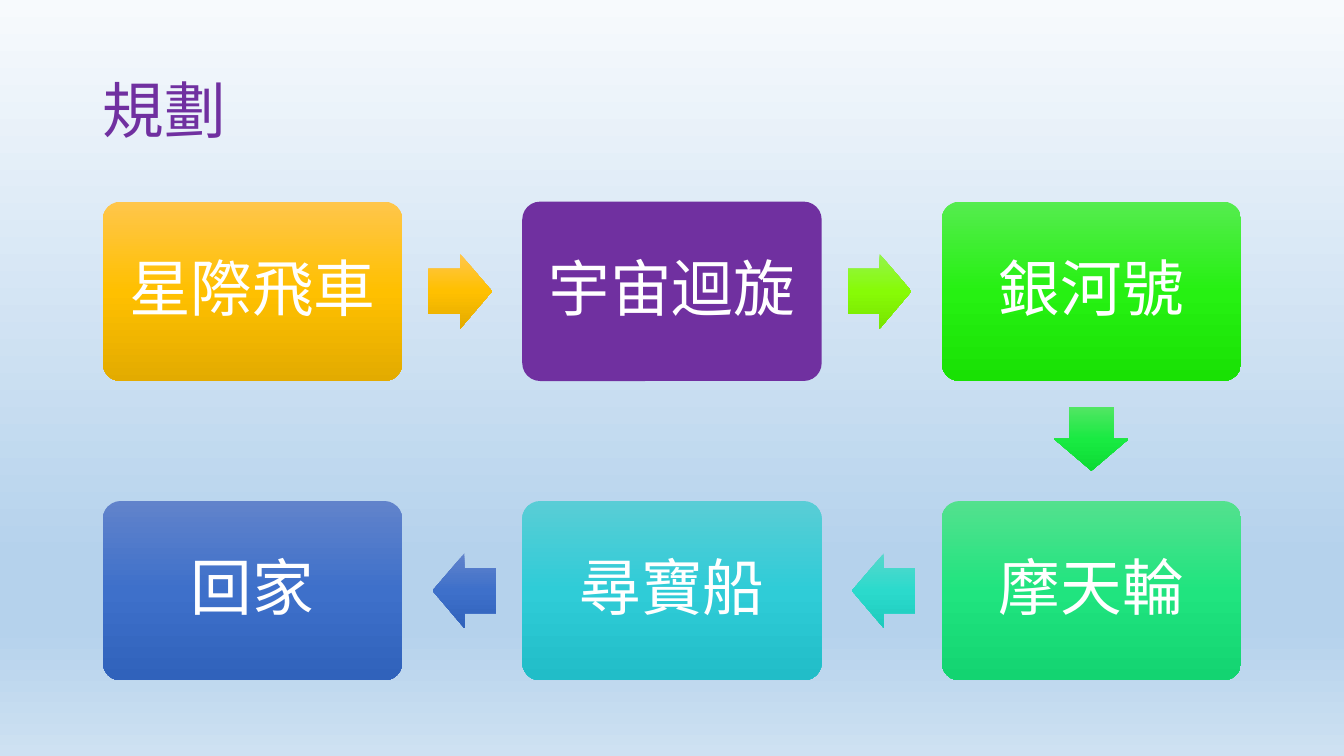
from lxml.etree import SubElement
from pptx import Presentation
from pptx.dml.color import RGBColor
from pptx.enum.shapes import MSO_SHAPE
from pptx.enum.text import MSO_ANCHOR, MSO_AUTO_SIZE, PP_ALIGN
from pptx.oxml.ns import qn
from pptx.util import Inches, Pt

TITLE = "規劃"
PURPLE, WHITE = "7030A0", "FFFFFF"
BACKGROUND = [(0, "F7FAFD"), (74, "B5D2EC"), (83, "B5D2EC"), (100, "CEE1F2")]

# Stops in visiting order: name, column, row, box colours
STOPS = [
    ("星際飛車", 0, 0, ["FFC64B", "FFC000", "E3AB00"]),
    ("宇宙迴旋", 1, 0, [PURPLE]),
    ("銀河號", 2, 0, ["55EC4E", "26F112", "19E104"]),
    ("摩天輪", 2, 1, ["53E18E", "20E47F", "13D471"]),
    ("尋寶船", 1, 1, ["59CDD6", "2FCCD7", "21BDC8"]),
    ("回家", 0, 1, ["6183CB", "3E70CA", "3062BB"]),
]
# Arrow colours, one for each step between stops
ARROWS = [
    ["FFC64B", "FFC000", "E3AB00"],
    ["94F44C", "87FB06", "78E500"],
    ["51E663", "19EA42", "0CDB34"],
    ["58D8CC", "2BDACC", "1ECBBD"],
    ["6183CB", "3E70CA", "3062BB"],
]

# Layout in inches
LEFT, TOP = 1.02, 2.0
BOX_W, BOX_H = 2.97, 1.78
PITCH_X, PITCH_Y = 4.16, 2.97
ARROW_W, ARROW_H, GAP = 0.63, 0.74, 0.26
ROTATION = {(1, 0): 0, (0, 1): 90, (-1, 0): 180}


def color(value):
    return RGBColor.from_string(value)


def set_gradient(fill, owner, stops):
    """Fill from top to bottom, whatever the rotation of the shape."""
    fill.gradient()
    grad = owner.find(".//" + qn("a:gradFill"))
    for child in list(grad):
        grad.remove(child)
    grad.set("rotWithShape", "0")
    stop_list = SubElement(grad, qn("a:gsLst"))
    for position, value in stops:
        gs = SubElement(stop_list, qn("a:gs"), pos=str(position * 1000))
        SubElement(gs, qn("a:srgbClr"), val=value)
    SubElement(grad, qn("a:lin"), ang="5400000", scaled="0")


def add_block(s, kind, center, size, colors, adjustments):
    (cx, cy), (w, h) = center, size
    sp = s.shapes.add_shape(kind, Inches(cx - w / 2), Inches(cy - h / 2),
                            Inches(w), Inches(h))
    sp.shadow.inherit = False
    sp.line.fill.background()
    for i, value in enumerate(adjustments):
        sp.adjustments[i] = value
    if len(colors) == 1:
        sp.fill.solid()
        sp.fill.fore_color.rgb = color(colors[0])
    else:
        set_gradient(sp.fill, sp._element, zip((0, 50, 100), colors))
    return sp


def format_text(tf, text, font_name, font_color, align):
    tf.word_wrap = True
    tf.auto_size = MSO_AUTO_SIZE.NONE
    tf.vertical_anchor = MSO_ANCHOR.MIDDLE
    p = tf.paragraphs[0]
    p.text = text
    p.alignment = align
    p.line_spacing = 0.9
    p.font.size = Pt(44)
    p.font.name = font_name
    p.font.color.rgb = color(font_color)
    return p


def box_center(column, row):
    return (LEFT + BOX_W / 2 + column * PITCH_X,
            TOP + BOX_H / 2 + row * PITCH_Y)


prs = Presentation()
prs.slide_width, prs.slide_height = Inches(13.33), Inches(7.5)
s = prs.slides.add_slide(prs.slide_layouts[5])
set_gradient(s.background.fill, s._element, BACKGROUND)

# Title
title = s.shapes.title
title.left, title.top = Inches(0.92), Inches(0.4)
title.width, title.height = Inches(11.5), Inches(1.45)
p = format_text(title.text_frame, TITLE, "Noto Sans CJK SC", PURPLE, PP_ALIGN.LEFT)
r = p.runs[0]
SubElement(r._r.get_or_add_rPr(), qn("a:ea"), typeface="Noto Sans CJK SC")

# Boxes, each followed by the arrow to the next stop
for i, (name, column, row, colors) in enumerate(STOPS):
    cx, cy = box_center(column, row)
    box = add_block(s, MSO_SHAPE.ROUNDED_RECTANGLE, (cx, cy), (BOX_W, BOX_H),
                    colors, [0.1])
    tf = box.text_frame
    tf.margin_left = tf.margin_right = Inches(0.18)
    tf.margin_top = tf.margin_bottom = Inches(0.18)
    format_text(tf, name, "Calibri", WHITE, PP_ALIGN.CENTER)

    if i < len(ARROWS):
        dx, dy = STOPS[i + 1][1] - column, STOPS[i + 1][2] - row
        reach = GAP + ARROW_W / 2
        center = (cx + dx * (BOX_W / 2 + reach), cy + dy * (BOX_H / 2 + reach))
        arrow = add_block(s, MSO_SHAPE.RIGHT_ARROW, center, (ARROW_W, ARROW_H),
                          ARROWS[i], [0.6, 0.5])
        arrow.rotation = ROTATION[dx, dy]

prs.save("out.pptx")
